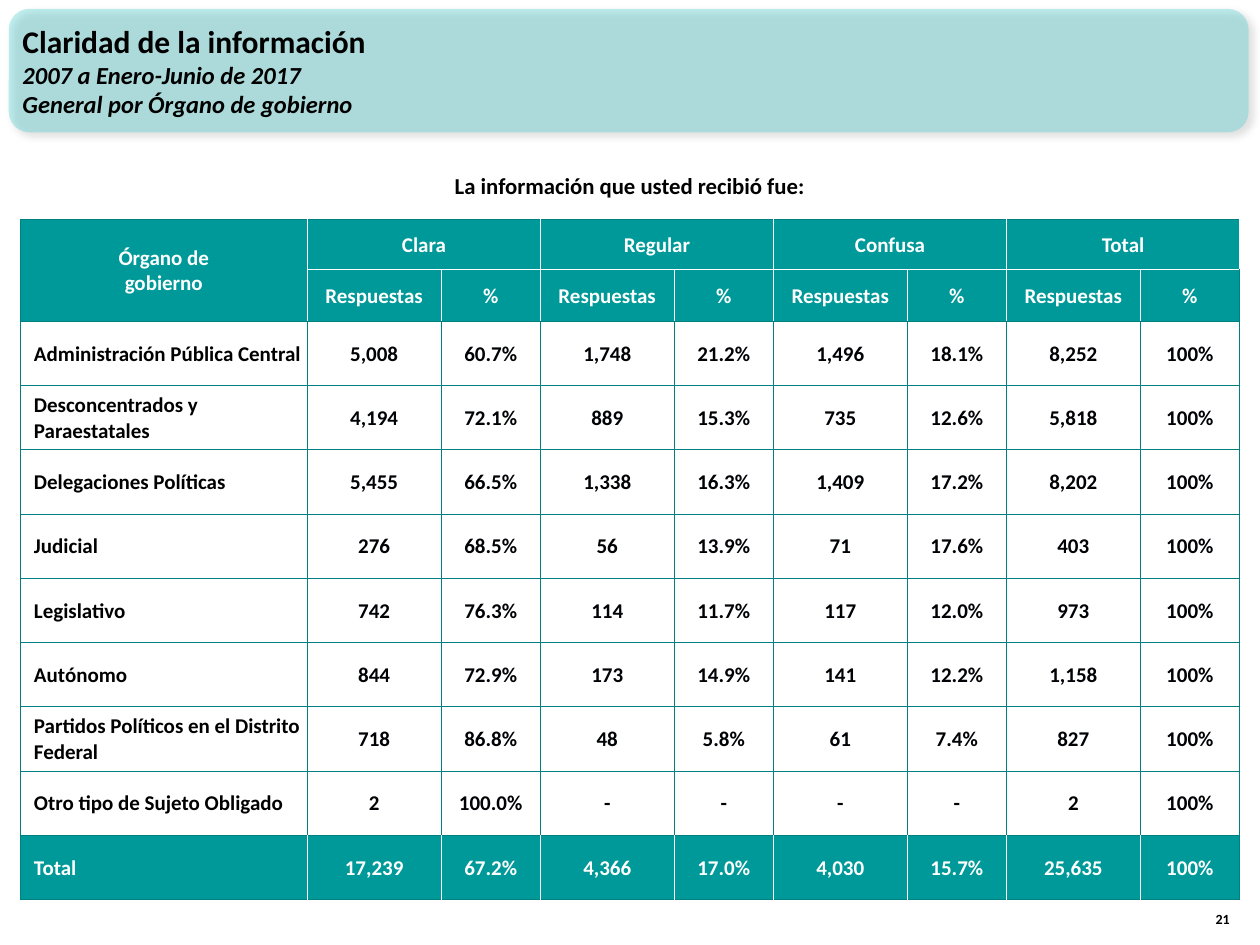
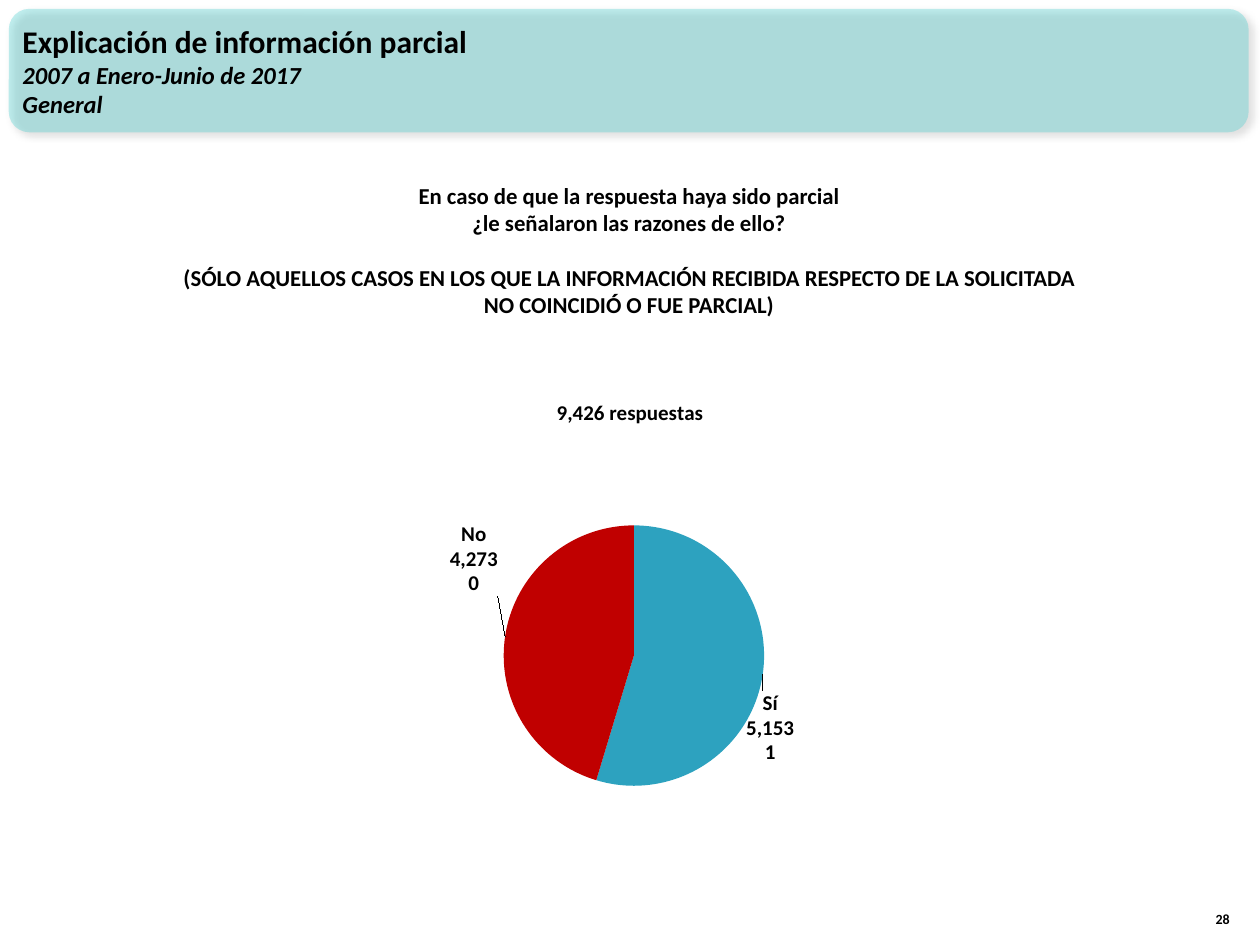
from pptx import Presentation
from pptx.chart.data import CategoryChartData
from pptx.dml.color import RGBColor
from pptx.enum.chart import XL_CHART_TYPE, XL_LABEL_POSITION
from pptx.enum.shapes import MSO_SHAPE
from pptx.enum.text import MSO_ANCHOR, PP_ALIGN
from pptx.oxml import parse_xml
from pptx.oxml.ns import nsdecls, qn
from pptx.util import Inches, Pt

HUES = {"band": "33CCCC", "head": "009999", "rule": "008080", "white": "FFFFFF",
        "black": "000000", "ink": "010205", "yes": "2DA2BF", "no": "C00000"}
FONT = "Calibri"
WIDE, HIGH = 10, 7.5
YEARS = "2007 a Enero-Junio de 2017"

CLEAR = {
    "title": ["Claridad de la información", YEARS, "General por Órgano de gobierno"],
    "page": "21",
    "ask": ["La información que usted recibió fue:"],
    "corner": "Órgano de\ngobierno",
    "groups": ["Clara", "Regular", "Confusa", "Total"],
    "pair": ["Respuestas", "%"],
    "rows": [
        ("Administración Pública Central", "5,008", "60.7%", "1,748", "21.2%", "1,496", "18.1%", "8,252", "100%"),
        ("Desconcentrados y Paraestatales", "4,194", "72.1%", "889", "15.3%", "735", "12.6%", "5,818", "100%"),
        ("Delegaciones Políticas", "5,455", "66.5%", "1,338", "16.3%", "1,409", "17.2%", "8,202", "100%"),
        ("Judicial", "276", "68.5%", "56", "13.9%", "71", "17.6%", "403", "100%"),
        ("Legislativo", "742", "76.3%", "114", "11.7%", "117", "12.0%", "973", "100%"),
        ("Autónomo", "844", "72.9%", "173", "14.9%", "141", "12.2%", "1,158", "100%"),
        ("Partidos Políticos en el Distrito Federal", "718", "86.8%", "48", "5.8%", "61", "7.4%", "827", "100%"),
        ("Otro tipo de Sujeto Obligado", "2", "100.0%", "-", "-", "-", "-", "2", "100%"),
        ("Total", "17,239", "67.2%", "4,366", "17.0%", "4,030", "15.7%", "25,635", "100%"),
    ],
}
PARTIAL = {
    "title": ["Explicación de información parcial", YEARS, "General"],
    "page": "28",
    "ask": ["En caso de que la respuesta haya sido parcial",
            "¿le señalaron las razones de ello?",
            "(SÓLO AQUELLOS CASOS EN LOS QUE LA INFORMACIÓN RECIBIDA RESPECTO DE LA "
            "SOLICITADA NO COINCIDIÓ O FUE PARCIAL)"],
    "chart": "9,426 respuestas",
    "parts": [("Sí", 5153, "yes", (-0.03, 0.03)), ("No", 4273, "no", (0, -0.08))],
}


def tint(hue):
    return RGBColor.from_string(HUES[hue])


def style(font, size, hue="black"):
    font.name, font.size, font.bold = FONT, Pt(size), True
    font.color.rgb = tint(hue)


def write(slide, box, lines, sizes, align=PP_ALIGN.LEFT, anchor=MSO_ANCHOR.TOP):
    frame = slide.shapes.add_textbox(*map(Inches, box)).text_frame
    frame.word_wrap = True
    frame.vertical_anchor = anchor
    frame.text = "\n".join(lines)
    for para, size in zip(frame.paragraphs, sizes):
        para.alignment = align
        style(para.runs[0].font, size)
    return frame.paragraphs


def start(deck, data):
    slide = deck.slides.add_slide(deck.slide_layouts[6])
    edge = 0.07
    band = slide.shapes.add_shape(MSO_SHAPE.ROUNDED_RECTANGLE,
                                  *map(Inches, (edge, edge, 9.84, 0.98)))
    band.fill.solid()
    band.fill.fore_color.rgb = tint("band")
    band.line.fill.background()
    color = band.fill._xPr.find(qn("a:solidFill"))[0]
    color.append(parse_xml(f'<a:alpha {nsdecls("a")} val="30000"/>'))
    band._element.spPr.append(parse_xml(
        f'<a:effectLst {nsdecls("a")}><a:outerShdw blurRad="{Pt(4)}" dist="{Pt(3)}" '
        f'dir="2700000" algn="tl" rotWithShape="0"><a:srgbClr val="{HUES["black"]}">'
        '<a:alpha val="40000"/></a:srgbClr></a:outerShdw></a:effectLst>'))
    lines = write(slide, (0.08, 0.09, 9.17, 0.94), data["title"], (18, 14, 14),
                  anchor=MSO_ANCHOR.MIDDLE)
    for line in lines[1:]:
        line.runs[0].font.italic = True
    write(slide, (9.46, 7.01, 0.4, 0.4), [data["page"]], [8],
          PP_ALIGN.RIGHT, MSO_ANCHOR.BOTTOM)
    return slide


def edges(cell, hues):
    for spot, (side, hue) in enumerate(hues.items()):
        cell._tc.get_or_add_tcPr().insert(spot, parse_xml(
            f'<a:ln{side} {nsdecls("a")} w="{Pt(0.5)}"><a:solidFill>'
            f'<a:srgbClr val="{HUES[hue]}"/></a:solidFill></a:ln{side}>'))


def paint(cell, row, col, last, end):
    filled = row < 2 or row == last
    cell.margin_left = cell.margin_right = cell.margin_top = Inches(0.01)
    cell.margin_bottom = 0
    cell.vertical_anchor = MSO_ANCHOR.MIDDLE
    if filled:
        cell.fill.solid()
        cell.fill.fore_color.rgb = tint("head")
    else:
        cell.fill.background()
    inner = {"L": filled and col > 0, "R": filled and col < end,
             "T": row == 1 and col > 0, "B": row == 0 and col > 0}
    edges(cell, {side: "white" if on else "rule" for side, on in inner.items()})
    hue = "white" if filled else "ink" if col else "black"
    for para in cell.text_frame.paragraphs:
        if col or row < 2:
            para.alignment = PP_ALIGN.CENTER
        else:
            para._p.get_or_add_pPr().set("marL", str(Inches(0.1)))
        for run in para.runs:
            style(run.font, 12, hue)


def grid(slide, data):
    groups, pair = data["groups"], data["pair"]
    top = [data["corner"]]
    for group in groups:
        top += [group, ""]
    cells = [top, [""] + pair * len(groups), *data["rows"]]
    wides = [2.28] + [1.06, 0.79] * len(groups)
    highs = [0.4] * 2 + [0.51] * len(data["rows"])
    table = slide.shapes.add_table(len(highs), len(wides), Inches(0.16), Inches(1.74),
                                   Inches(sum(wides)), Inches(sum(highs))).table
    for part, wide in zip(table.columns, wides):
        part.width = Inches(wide)
    for part, high in zip(table.rows, highs):
        part.height = Inches(high)
    for row, texts in enumerate(cells):
        for col, text in enumerate(texts):
            cell = table.cell(row, col)
            cell.text = text
            paint(cell, row, col, len(highs) - 1, len(wides) - 1)
    table.cell(0, 0).merge(table.cell(1, 0))
    for col in range(1, len(wides), 2):
        table.cell(0, col).merge(table.cell(0, col + 1))


def place(spots):
    marks = "".join(f'<c:{key} val="{val}"/>' for key, val in spots.items())
    return f"<c:layout><c:manualLayout>{marks}</c:manualLayout></c:layout>"


def pie(slide, data):
    parts = data["parts"]
    feed = CategoryChartData(number_format="#,##0")
    feed.categories = [part[0] for part in parts]
    feed.add_series(data["chart"], [part[1] for part in parts])
    chart = slide.shapes.add_chart(XL_CHART_TYPE.PIE, *map(Inches, (1.85, 3, 6.3, 3.9)),
                                   feed).chart
    style(chart.font, 12)
    chart.has_legend = False
    chart.has_title = True
    title = chart.chart_title
    title.text_frame.text = data["chart"]
    style(title.text_frame.paragraphs[0].runs[0].font, 12)
    for over in title._element.findall(qn("c:overlay")):
        over.set("val", "1")
    plot = chart.plots[0]
    plot.vary_by_categories = True
    area = chart._chartSpace.chart.plotArea
    for old in area.findall(qn("c:layout")):
        area.remove(old)
    spots = {"layoutTarget": "inner", "xMode": "edge", "yMode": "edge",
             "x": 0.23, "y": 0.3, "w": 0.55, "h": 0.53}
    area.insert(0, parse_xml(place(spots).replace("<c:layout>", f'<c:layout {nsdecls("c")}>')))
    line = plot.series[0]
    tags = line.data_labels
    style(tags.font, 12)
    tags.number_format, tags.number_format_is_linked = "#,##0", False
    tags.position = XL_LABEL_POSITION.OUTSIDE_END
    tags.show_value = tags.show_percentage = tags.show_category_name = True
    shows = {"LegendKey": 0, "Val": 1, "CatName": 1, "SerName": 0, "Percent": 1, "BubbleSize": 0}
    flags = "".join(f'<c:show{key} val="{on}"/>' for key, on in shows.items())
    for spot, (_, _, hue, (right, down)) in enumerate(parts):
        fill = line.points[spot].format.fill
        fill.solid()
        fill.fore_color.rgb = tint(hue)
        tags._element.insert(spot, parse_xml(
            f'<c:dLbl {nsdecls("c")}><c:idx val="{spot}"/>{place({"x": right, "y": down})}'
            '<c:numFmt formatCode="#,##0" sourceLinked="0"/><c:dLblPos val="outEnd"/>'
            f"{flags}<c:separator>\n</c:separator></c:dLbl>"))


def main():
    deck = Presentation()
    deck.slide_width, deck.slide_height = Inches(WIDE), Inches(HIGH)
    clear = start(deck, CLEAR)
    write(clear, (0.89, 1.31, 8.21, 0.32), CLEAR["ask"], [13], PP_ALIGN.CENTER)
    grid(clear, CLEAR)
    partial = start(deck, PARTIAL)
    pie(partial, PARTIAL)
    lines = write(partial, (1.28, 1.39, 7.42, 1.19), PARTIAL["ask"], [13] * 3, PP_ALIGN.CENTER)
    lines[-1].space_before = Pt(15.6)
    deck.save("out.pptx")


if __name__ == "__main__":
    main()
